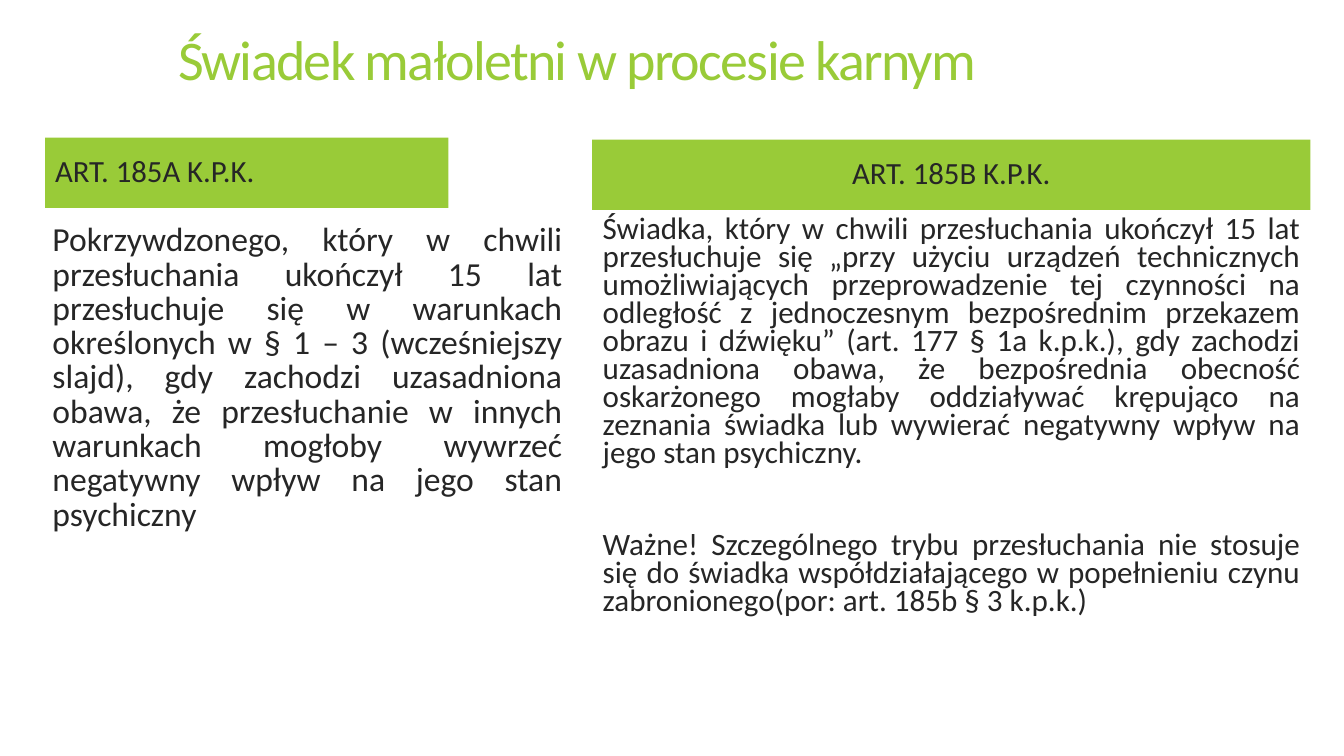
import pptx
import pptx.dml.color
import pptx.enum.shapes
import pptx.enum.text
import pptx.util

PX = 9525
FONT = "Calibri"
GREEN = pptx.dml.color.RGBColor(0x99, 0xCB, 0x38)
DARK = pptx.dml.color.RGBColor(0x26, 0x26, 0x26)

ALIGN = pptx.enum.text.PP_ALIGN
ANCHOR = pptx.enum.text.MSO_ANCHOR

TITLE = "Świadek małoletni w procesie karnym"
VICTIM_RULE = [
    "Pokrzywdzonego, który w chwili przesłuchania ukończył 15 lat "
    "przesłuchuje się w warunkach określonych w § 1 – 3 (wcześniejszy slajd), "
    "gdy zachodzi uzasadniona obawa, że przesłuchanie w innych warunkach "
    "mogłoby wywrzeć negatywny wpływ na jego stan psychiczny",
]
WITNESS_RULE = [
    "Świadka, który w chwili przesłuchania ukończył 15 lat przesłuchuje się "
    "„przy użyciu urządzeń technicznych umożliwiających przeprowadzenie tej "
    "czynności na odległość z jednoczesnym bezpośrednim przekazem obrazu "
    "i dźwięku” (art. 177 § 1a k.p.k.), gdy zachodzi uzasadniona obawa, że "
    "bezpośrednia obecność oskarżonego mogłaby oddziaływać krępująco na "
    "zeznania świadka lub wywierać negatywny wpływ na jego stan psychiczny.",
    "Ważne! Szczególnego trybu przesłuchania nie stosuje się do świadka "
    "współdziałającego w popełnieniu czynu zabronionego(por: art. 185b § 3 k.p.k.)",
]


def box(left, top, width, height):
    return [pptx.util.Emu(length * PX) for length in (left, top, width, height)]


def write(frame, paragraphs, size, color=DARK, align=ALIGN.LEFT,
          anchor=ANCHOR.TOP, line_spacing=0.85, gap=0, tracking=0):
    frame.word_wrap = True
    frame.auto_size = pptx.enum.text.MSO_AUTO_SIZE.NONE
    frame.vertical_anchor = anchor
    for index, text in enumerate(paragraphs):
        paragraph = frame.add_paragraph() if index else frame.paragraphs[0]
        paragraph.alignment = align
        paragraph.line_spacing = line_spacing
        paragraph.space_before = pptx.util.Pt(gap if index else 0)
        run = paragraph.add_run()
        run.text = text
        run.font.name = FONT
        run.font.size = pptx.util.Pt(size)
        run.font.color.rgb = color
        if tracking:
            run.font._element.set("spc", str(round(tracking * 100)))


def add_title(slide):
    title = slide.shapes.title
    title.left, title.top, title.width, title.height = box(160, 0, 888, 120)
    write(title.text_frame, [TITLE], 40, color=GREEN, anchor=ANCHOR.MIDDLE,
          tracking=-1.2)


def add_article_header(slide, article, bounds, align):
    header = slide.shapes.add_shape(
        pptx.enum.shapes.MSO_SHAPE.RECTANGLE, *box(*bounds))
    header.shadow.inherit = False
    header.fill.solid()
    header.fill.fore_color.rgb = GREEN
    header.line.fill.background()
    write(header.text_frame, [article], 22, align=align, anchor=ANCHOR.MIDDLE)


def add_rule(slide, paragraphs, bounds, inset=10, **text_format):
    rule = slide.shapes.add_textbox(*box(*bounds))
    rule.text_frame.margin_left = pptx.util.Emu(inset * PX)
    write(rule.text_frame, paragraphs, align=ALIGN.JUSTIFY, **text_format)


def main():
    deck = pptx.Presentation()
    deck.slide_width, deck.slide_height = box(0, 0, 1280, 720)[2:]
    slide = deck.slides.add_slide(deck.slide_layouts.get_by_name("Title Only"))
    add_title(slide)
    add_article_header(slide, "ART. 185A K.P.K.", (43, 131, 384, 67), ALIGN.LEFT)
    add_rule(slide, VICTIM_RULE, (31, 209, 514, 415), inset=19, size=24)
    add_article_header(slide, "ART. 185B K.P.K.", (564, 133, 684, 67), ALIGN.CENTER)
    add_rule(slide, WITNESS_RULE, (564, 202, 684, 492), size=22.2,
             line_spacing=0.75, gap=46)
    deck.save("out.pptx")


if __name__ == "__main__":
    main()
